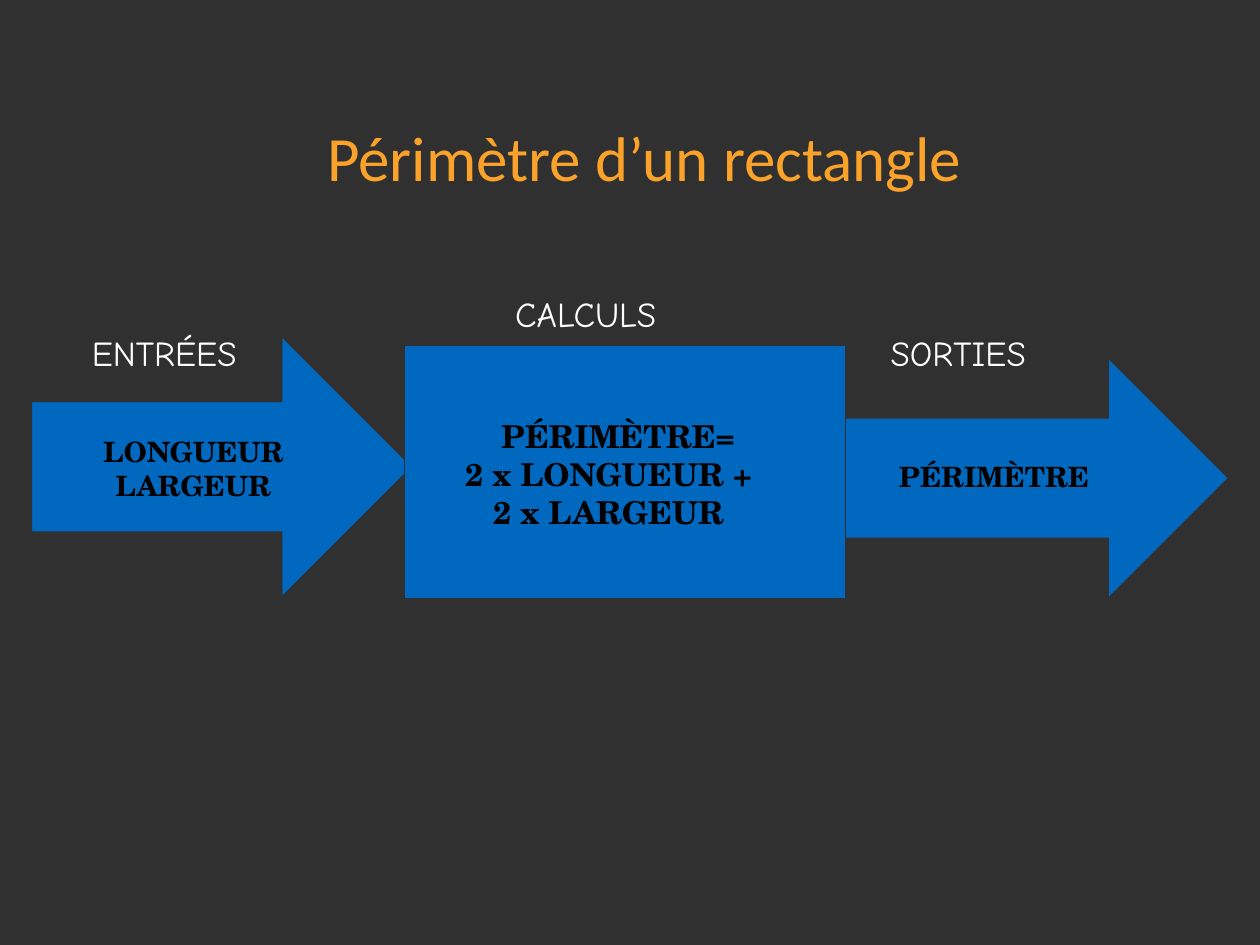
from pptx import Presentation
from pptx.dml.color import RGBColor
from pptx.enum.shapes import MSO_SHAPE as Shape
from pptx.enum.text import MSO_ANCHOR as Anchor, PP_ALIGN as Align
from pptx.util import Inches, Pt

BACKGROUND, BLUE, ORANGE, WHITE, BLACK = "303030", "0069BF", "FAA22A", "FFFFFF", "000000"
TITLE = "Périmètre d’un rectangle"
TITLE_BOX = (1.01, 0.84, 8.21, 0.93)
STEPS = [
    (Shape.RIGHT_ARROW, (0.25, 2.67, 3.02, 2.07)),
    (Shape.RIGHT_ARROW, (6.6, 2.84, 3.15, 1.91)),
    (Shape.RECTANGLE, (3.21, 2.74, 3.5, 2.01)),
]
HEADINGS = [("ENTRÉES", 0.63, 2.53), ("CALCULS", 3.99, 2.22), ("SORTIES", 6.97, 2.53)]
HEADING_SIZE = (2.01, 0.31)
# Each line of a caption is a pair: wording, right indent
CAPTIONS = [
    ([("LONGUEUR", 0), ("LARGEUR", 0)], (0.25, 3.35, 2.57, 0.52), 16),
    ([("PÉRIMÈTRE=", 0.07), ("2 x LONGUEUR +", 0.22), ("2 x LARGEUR", 0)],
     (3.43, 3.21, 3.02, 1.45), 18),
    ([("PÉRIMÈTRE", 0)], (6.86, 3.55, 2.06, 0.31), 16),
]
TITLE_FONT = {"name": "Calibri", "size": Pt(36), "bold": False}
HEADING_FONT = {"name": "Comic Neue", "size": Pt(20), "bold": False}
CAPTION_FONT = {"name": "TeX Gyre Schola", "bold": True}
FRAME = {"word_wrap": True, "vertical_anchor": Anchor.TOP, "margin_left": Inches(0.1),
         "margin_right": Inches(0.1), "margin_top": Inches(0.1), "margin_bottom": Inches(0.1)}


def paint(target, color):
    """Give a fill a solid colour."""
    target.solid()
    target.fore_color.rgb = RGBColor.from_string(color)


def apply(target, values):
    """Set every attribute in a dict of format values."""
    for key, value in values.items():
        setattr(target, key, value)


def write(frame, lines, font, color, align):
    """Fill a text frame with formatted lines and their right indents."""
    apply(frame, FRAME)
    for index, (wording, indent) in enumerate(lines):
        paragraph = frame.add_paragraph() if index else frame.paragraphs[0]
        paragraph.alignment = align
        if indent:
            paragraph._p.get_or_add_pPr().set("marR", str(Inches(indent)))
        run = paragraph.add_run()
        run.text = wording
        apply(run.font, font)
        paint(run.font.fill, color)


def main():
    """Build the slide and save it."""
    deck = Presentation()
    deck.slide_width, deck.slide_height = Inches(10), Inches(7.5)
    slide = deck.slides.add_slide(deck.slide_layouts[5])
    paint(slide.background.fill, BACKGROUND)

    title = slide.shapes.title
    apply(title, dict(zip(("left", "top", "width", "height"), map(Inches, TITLE_BOX))))
    write(title.text_frame, [(TITLE, 0)], TITLE_FONT, ORANGE, Align.CENTER)

    for kind, box in STEPS:
        step = slide.shapes.add_shape(kind, *map(Inches, box))
        step.shadow.inherit = False
        paint(step.fill, BLUE)
        paint(step.line.fill, BACKGROUND)
        step.line.width = Pt(0.75)

    for wording, left, top in HEADINGS:
        heading = slide.shapes.add_textbox(*map(Inches, (left, top, *HEADING_SIZE)))
        write(heading.text_frame, [(wording, 0)], HEADING_FONT, WHITE, Align.LEFT)

    for lines, box, size in CAPTIONS:
        caption = slide.shapes.add_textbox(*map(Inches, box))
        write(caption.text_frame, lines, {**CAPTION_FONT, "size": Pt(size)}, BLACK, Align.CENTER)

    deck.save("out.pptx")


if __name__ == "__main__":
    main()
